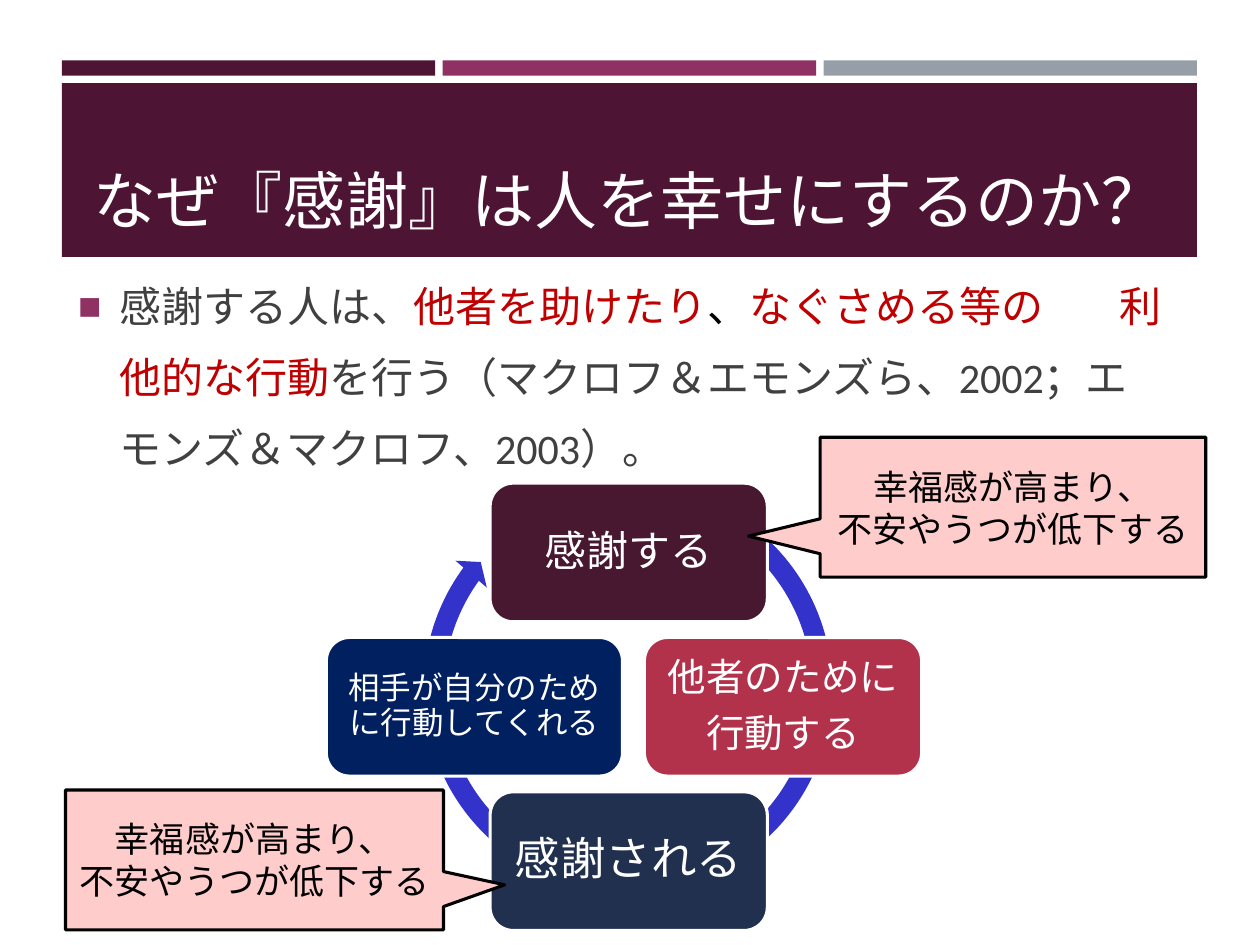
from lxml import etree
from pptx import Presentation
from pptx.dml.color import RGBColor
from pptx.enum import shapes, text
from pptx.oxml.ns import qn
from pptx.util import Inches, Pt

PLUM = RGBColor(0x4D, 0x14, 0x34)
MAGENTA = RGBColor(0x90, 0x31, 0x63)
GRAY = RGBColor(0x96, 0x9F, 0xA7)
DARK_PLUM = RGBColor(0x48, 0x18, 0x31)
CRIMSON = RGBColor(0xB2, 0x32, 0x4B)
SLATE = RGBColor(0x20, 0x30, 0x4E)
NAVY = RGBColor(0x00, 0x20, 0x60)
BLUE = RGBColor(0x33, 0x33, 0xCC)
PINK = RGBColor(0xFF, 0xCC, 0xCC)
RED = RGBColor(0xC0, 0x00, 0x00)
INK = RGBColor(0x40, 0x40, 0x40)
BLACK = RGBColor(0, 0, 0)
WHITE = RGBColor(0xFF, 0xFF, 0xFF)
FONT = "Calibri"

HEADING = "なぜ『感謝』は人を幸せにするのか？"
FINDING = [
    ("感謝する人は、", INK, 0),
    ("他者を助けたり", RED, 0),
    ("、", BLACK, 0),
    ("なぐさめる等の", RED, 0),
    (" ", RED, 38),
    ("利他的な行動", RED, 0),
    ("を行う（マクロフ＆エモンズら、2002；エモンズ＆マクロフ、2003）。", INK, 0),
]
STEPS = [
    (["感謝する"], DARK_PLUM, 24, 0.1, 2.2, (0, -1)),
    (["他者のために", "行動する"], CRIMSON, 22, 0.09, 2.2, (1, 0)),
    (["感謝される"], SLATE, 26, 0.11, 2.2, (0, 1)),
    (["相手が自分のために行動してくれる"], NAVY, 18, 0.07, 2.35, (-1, 0)),
]
EFFECT = ["幸福感が高まり、", "不安やうつが低下する"]
CALLOUTS = [
    ((6.51, 3.47, 3.06, 1.11), (-0.686, 0.207)),
    ((0.52, 6.27, 3, 1.11), (0.662, 0.178)),
]

MARGIN, CONTENT_W, GAP = 0.49, 9.01, 0.06
CYCLE_X, CYCLE_Y, CYCLE_STEP = 4.99, 5.61, 1.225
CARD_H = 1.1
RING = (3.28, 3.76, 3.41, 3.41)
RING_ADJUSTMENTS = (0.047, 2.729, 129.659, 179.398, 0.048)

prs = Presentation()
prs.slide_width, prs.slide_height = Inches(10), Inches(7.5)
slide = prs.slides.add_slide(prs.slide_layouts[1])


def place(holder, box):
    holder.left, holder.top, holder.width, holder.height = map(Inches, box)


def style(run, size, color):
    run.font.name = FONT
    run.font.size = Pt(size)
    run.font.color.rgb = color


def add_block(kind, box, fill, line=None, adjustments=()):
    block = slide.shapes.add_shape(kind, *map(Inches, box))
    block.shadow.inherit = False
    block.fill.solid()
    block.fill.fore_color.rgb = fill
    if line is None:
        block.line.fill.background()
    else:
        block.line.color.rgb = line
        block.line.width = Pt(1.75)
    for i, value in enumerate(adjustments):
        block.adjustments[i] = value
    return block


def write_centred(block, lines, size, color, spacing=1.0, after=0):
    frame = block.text_frame
    frame.word_wrap = True
    frame.vertical_anchor = text.MSO_ANCHOR.MIDDLE
    frame.text = "\n".join(lines)
    for paragraph in frame.paragraphs:
        paragraph.alignment = text.PP_ALIGN.CENTER
        paragraph.line_spacing = spacing
        paragraph.space_after = Pt(after)
        style(paragraph.runs[0], size, color)


def add_square_bullet(paragraph, color, percent, indent):
    props = paragraph._p.get_or_add_pPr()
    props.set("marL", str(Inches(indent)))
    props.set("indent", str(-Inches(indent)))
    bullet_color = etree.SubElement(props, qn("a:buClr"))
    etree.SubElement(bullet_color, qn("a:srgbClr"), val=str(color))
    etree.SubElement(props, qn("a:buSzPct"), val=str(percent * 1000))
    etree.SubElement(props, qn("a:buChar"), char="■")


stripe_w = (CONTENT_W - 2 * GAP) / 3
for column, color in enumerate((PLUM, MAGENTA, GRAY)):
    left = MARGIN + column * (stripe_w + GAP)
    add_block(shapes.MSO_SHAPE.RECTANGLE, (left, 0.48, stripe_w, 0.12), color)
banner = add_block(shapes.MSO_SHAPE.RECTANGLE, (MARGIN, 0.66, CONTENT_W, 1.38), PLUM)

heading = slide.shapes.title
finding = slide.placeholders[1]
banner._element.addnext(heading._element)
heading._element.addnext(finding._element)

place(heading, (0.64, 0.75, 8.74, 1.18))
heading.text_frame.text = HEADING
heading.text_frame.auto_size = text.MSO_AUTO_SIZE.NONE
heading.text_frame.vertical_anchor = text.MSO_ANCHOR.BOTTOM
heading.text_frame.paragraphs[0].alignment = text.PP_ALIGN.LEFT
style(heading.text_frame.paragraphs[0].runs[0], 36, WHITE)

place(finding, (0.52, 2.02, 8.85, 5.32))
finding.text_frame.auto_size = text.MSO_AUTO_SIZE.NONE
sentence = finding.text_frame.paragraphs[0]
sentence.line_spacing = 1.4
sentence.space_before, sentence.space_after = Pt(5), Pt(6)
add_square_bullet(sentence, MAGENTA, 92, 0.33)
for words, color, tracking in FINDING:
    run = sentence.add_run()
    run.text = words
    style(run, 24, color)
    if tracking:
        run.font._element.set("spc", str(tracking * 100))

add_block(shapes.MSO_SHAPE.CIRCULAR_ARROW, RING, BLUE, adjustments=RING_ADJUSTMENTS)
for lines, fill, size, inset, width, (dx, dy) in STEPS:
    left = CYCLE_X + dx * CYCLE_STEP - width / 2
    top = CYCLE_Y + dy * CYCLE_STEP - CARD_H / 2
    card = add_block(shapes.MSO_SHAPE.ROUNDED_RECTANGLE, (left, top, width, CARD_H), fill, WHITE)
    frame = card.text_frame
    frame.margin_left = frame.margin_right = Inches(inset)
    frame.margin_top = frame.margin_bottom = Inches(inset)
    write_centred(card, lines, size, WHITE, 0.9, round(size * 0.35))

for box, pointer in CALLOUTS:
    callout = add_block(shapes.MSO_SHAPE.RECTANGULAR_CALLOUT, box, PINK, BLACK, pointer)
    write_centred(callout, EFFECT, 20, BLACK)

prs.save("out.pptx")
